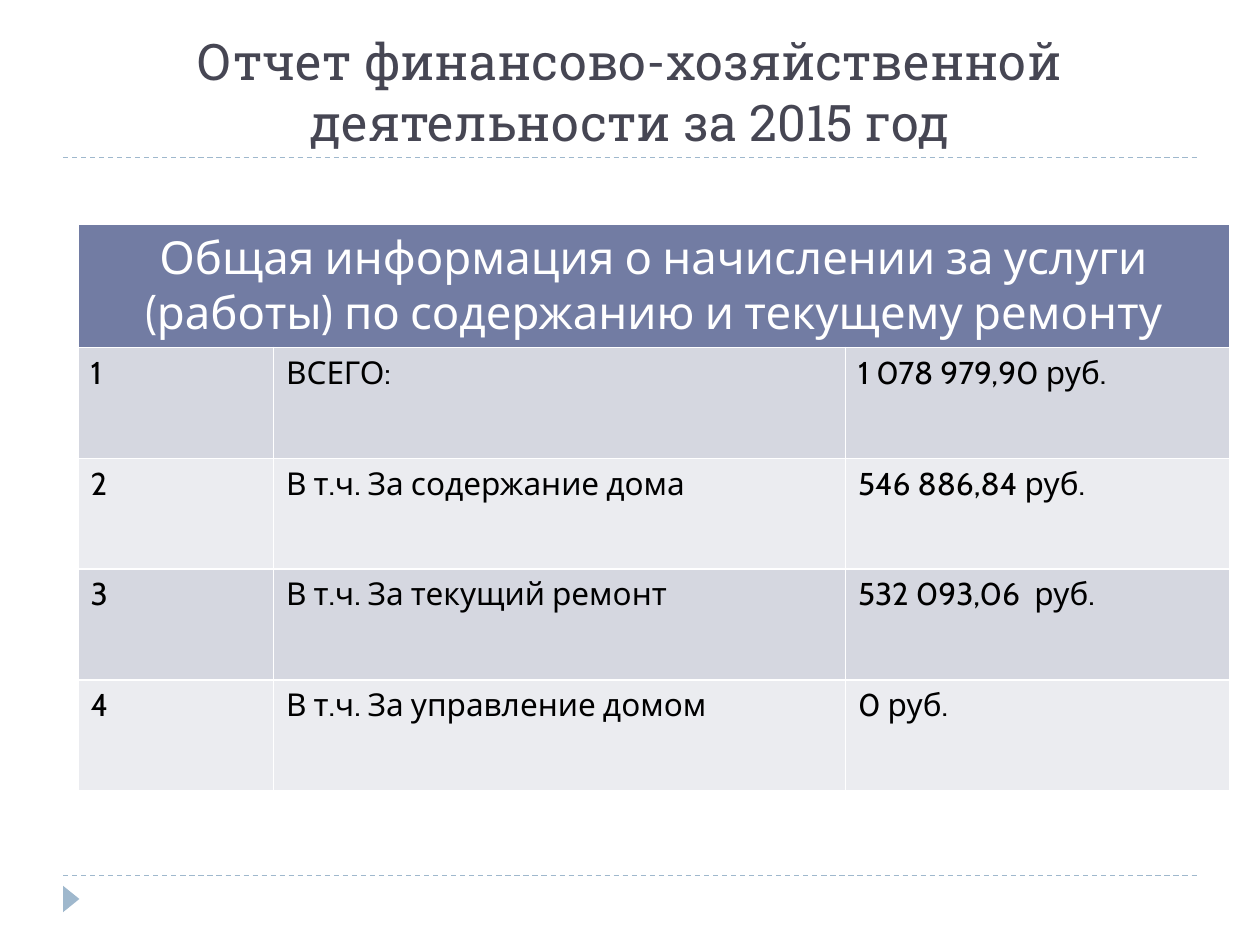
from pptx import Presentation
from pptx.dml.color import RGBColor
from pptx.enum.dml import MSO_LINE
from pptx.enum.shapes import MSO_CONNECTOR, MSO_SHAPE
from pptx.enum.text import MSO_ANCHOR, PP_ALIGN
from pptx.oxml.ns import qn
from pptx.util import Inches, Pt
from lxml.etree import SubElement

ACCENT = "9FB8CD"
HEADER_FILL = "727CA3"
BAND_FILLS = ("D5D7E0", "EBECF0")
COLUMN_WIDTHS = (1.55, 4.54, 3.05)
HEADER_HEIGHT = 0.9
ROW_HEIGHT = 0.88
HEADING = "Общая информация о начислении за услуги (работы) по содержанию и текущему ремонту"
CHARGES = (
    ("ВСЕГО:", "1 078 979,90 руб."),
    ("В т.ч. За содержание дома", "546 886,84 руб."),
    ("В т.ч. За текущий ремонт", "532 093,06  руб."),
    ("В т.ч. За управление домом", "0 руб."),
)


def color(value):
    return RGBColor.from_string(value)


def format_paragraph(para, font_name, size, font_color, align):
    para.alignment = align
    para.font.name = font_name
    para.font.size = Pt(size)
    para.font.bold = False
    para.font.color.rgb = color(font_color)


def add_title(page, text):
    title = page.shapes.title
    title.left, title.top = Inches(0.5), Inches(0.25)
    title.width, title.height = Inches(9), Inches(1)
    frame = title.text_frame
    frame.text = text
    frame.word_wrap = True
    frame.vertical_anchor = MSO_ANCHOR.BOTTOM
    format_paragraph(frame.paragraphs[0], "Roboto Slab", 28.8, "464653", PP_ALIGN.CENTER)


def add_rule(page, top):
    rule = page.shapes.add_connector(
        MSO_CONNECTOR.STRAIGHT, Inches(0.5), Inches(top), Inches(9.5), Inches(top)
    )
    rule.line.color.rgb = color(ACCENT)
    rule.line.width = Pt(0.75)
    rule.line.dash_style = MSO_LINE.DASH
    SubElement(rule._element.spPr, qn("a:effectLst"))


def add_marker(page):
    marker = page.shapes.add_shape(
        MSO_SHAPE.ISOSCELES_TRIANGLE, Inches(0.46), Inches(7.07), Inches(0.21), Inches(0.13)
    )
    marker.rotation = 90
    marker.shadow.inherit = False
    marker.fill.solid()
    marker.fill.fore_color.rgb = color(ACCENT)
    marker.line.fill.background()


def fill_cell(cell, text, fill, size=18, font_color="000000", align=PP_ALIGN.LEFT):
    cell.fill.solid()
    cell.fill.fore_color.rgb = color(fill)
    cell.text = text
    format_paragraph(cell.text_frame.paragraphs[0], "Cabin", size, font_color, align)


def add_charges_table(page):
    height = HEADER_HEIGHT + ROW_HEIGHT * len(CHARGES)
    table = page.shapes.add_table(
        len(CHARGES) + 1, len(COLUMN_WIDTHS),
        Inches(0.62), Inches(1.78), Inches(sum(COLUMN_WIDTHS)), Inches(height),
    ).table
    for column, width in zip(table.columns, COLUMN_WIDTHS):
        column.width = Inches(width)
    for index, row in enumerate(table.rows):
        row.height = Inches(ROW_HEIGHT if index else HEADER_HEIGHT)

    header = table.cell(0, 0)
    header.merge(table.cell(0, len(COLUMN_WIDTHS) - 1))
    fill_cell(header, HEADING, HEADER_FILL, 26, "FFFFFF", PP_ALIGN.CENTER)
    for number, charge in enumerate(CHARGES, start=1):
        fill = BAND_FILLS[(number - 1) % 2]
        for column, text in enumerate((str(number), *charge)):
            fill_cell(table.cell(number, column), text, fill)


def main():
    deck = Presentation()
    deck.slide_width, deck.slide_height = Inches(10), Inches(7.5)
    page = deck.slides.add_slide(deck.slide_layouts[5])
    for top in (6.95, 1.25):
        add_rule(page, top)
    add_marker(page)
    add_title(page, "Отчет финансово-хозяйственной деятельности за 2015 год")
    add_charges_table(page)
    deck.save("out.pptx")


if __name__ == "__main__":
    main()
